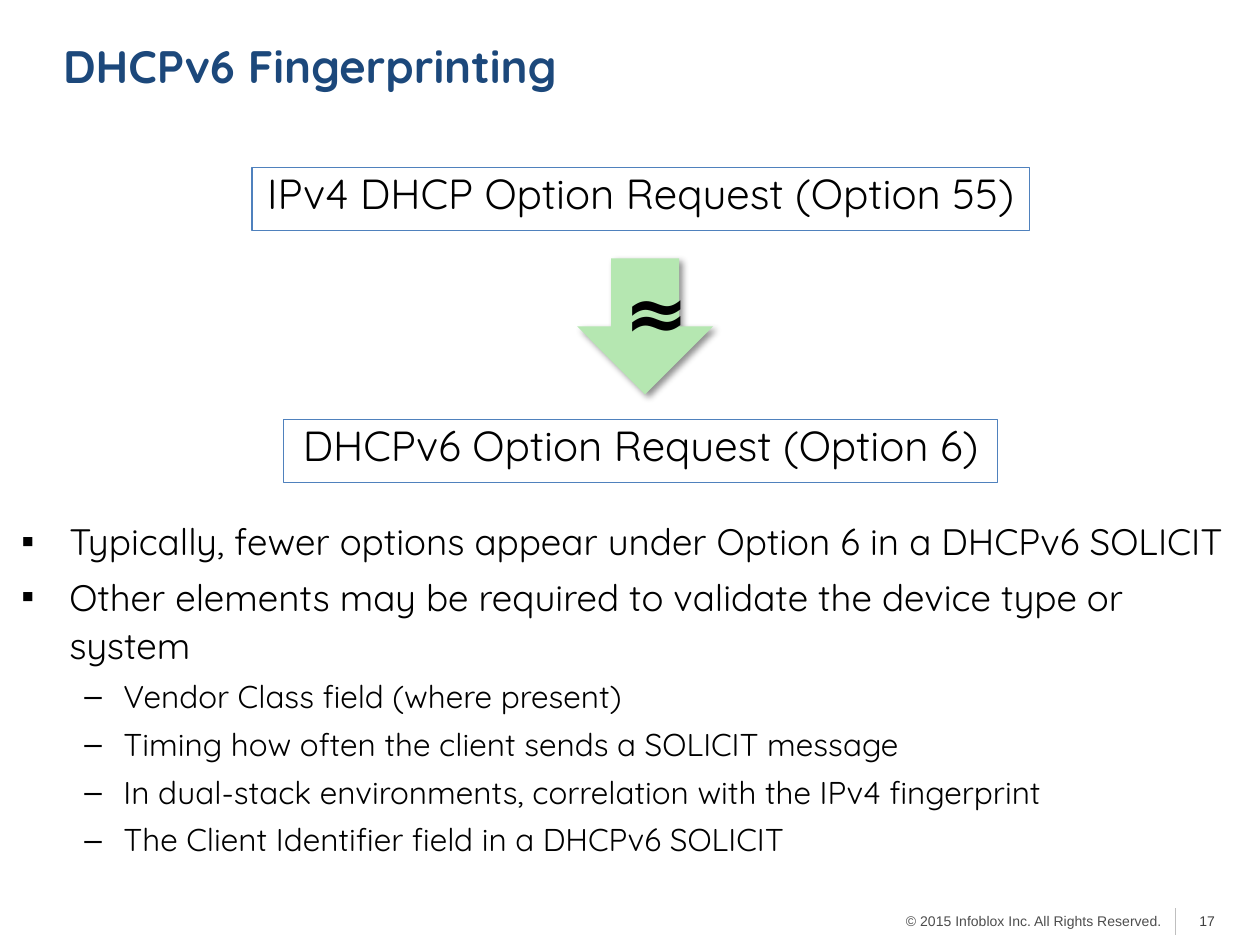
from lxml import etree
from pptx import Presentation
from pptx.dml.color import RGBColor
from pptx.enum import shapes, text
from pptx.oxml import parse_xml
from pptx.oxml.ns import qn
from pptx.util import Inches, Pt

NAVY = RGBColor(0x1C, 0x48, 0x7B)
BLUE = RGBColor(0x4F, 0x81, 0xBD)
GREEN = RGBColor(0xB5, 0xE7, 0xB1)
BLACK = RGBColor(0, 0, 0)
DARK = RGBColor(0x40, 0x40, 0x40)
GRAY = RGBColor(0x4D, 0x4D, 0x4D)
PALE = RGBColor(0xBF, 0xBF, 0xBF)
LEFT, MID, RIGHT = text.PP_ALIGN.LEFT, text.PP_ALIGN.CENTER, text.PP_ALIGN.RIGHT
NS = "http://schemas.openxmlformats.org/drawingml/2006/main"


def write(par, words, size, color=BLACK, face="Quicksand", bold=False, align=LEFT):
    par.alignment = align
    run = par.add_run()
    run.text = words
    run.font.size = Pt(size)
    run.font.name = face
    run.font.bold = bold
    run.font.color.rgb = color


def frame(shape, inset=0, wrap=True, anchor=text.MSO_ANCHOR.TOP):
    body = shape.text_frame
    body.word_wrap = wrap
    body.vertical_anchor = anchor
    body.margin_left = body.margin_right = Inches(inset)
    body.margin_top = body.margin_bottom = Inches(inset / 2)
    return body


deck = Presentation()
deck.slide_width, deck.slide_height = Inches(10), Inches(7.5)
slide = deck.slides.add_slide(deck.slide_layouts[6])
tree = slide.shapes

foot = tree.add_textbox(Inches(4.72), Inches(7.19), Inches(4.6), Inches(0.27))
write(frame(foot, 0.1).paragraphs[0], "© 2015 Infoblox Inc. All Rights Reserved.",
      8, GRAY, "Arial", align=RIGHT)

rule = tree.add_connector(shapes.MSO_CONNECTOR.STRAIGHT,
                          Inches(9.33), Inches(7.21), Inches(9.33), Inches(7.42))
rule.line.color.rgb = PALE
rule.line.width = Pt(1)
etree.SubElement(rule._element.spPr, qn("a:effectLst"))

title = tree.add_textbox(Inches(0.5), Inches(0.1), Inches(9.25), Inches(0.83))
write(frame(title, anchor=text.MSO_ANCHOR.MIDDLE).paragraphs[0],
      "DHCPv6 Fingerprinting", 26, NAVY, bold=True)

page = tree.add_textbox(Inches(9.42), Inches(7.19), Inches(0.42), Inches(0.2))
write(frame(page, 0.1).paragraphs[0], "17", 8, DARK, "Arial")

for left, top, width, words in [
    (2, 1.33, 6.17, "IPv4 DHCP Option Request (Option 55)"),
    (2.25, 3.33, 5.67, "DHCPv6 Option Request (Option 6)"),
]:
    box = tree.add_shape(shapes.MSO_SHAPE.RECTANGLE,
                         Inches(left), Inches(top), Inches(width), Inches(0.5))
    box.shadow.inherit = False
    box.fill.background()
    box.line.color.rgb = BLUE
    box.line.width = Pt(0.75)
    write(frame(box).paragraphs[0], words, 24, align=MID)

group = tree.add_group_shape()
arrow = group.shapes.add_shape(shapes.MSO_SHAPE.DOWN_ARROW,
                               Inches(4.58), Inches(2.05), Inches(1.08), Inches(1.08))
arrow.shadow.inherit = False
arrow.fill.solid()
arrow.fill.fore_color.rgb = GREEN
arrow.line.fill.background()
arrow._element.spPr.find(qn("a:effectLst")).append(parse_xml(
    f'<a:outerShdw xmlns:a="{NS}" blurRad="{Pt(4)}" dist="{Pt(3)}" dir="2700000" '
    'algn="tl" rotWithShape="0"><a:srgbClr val="000000"><a:alpha val="43000"/>'
    '</a:srgbClr></a:outerShdw>'))

sign = group.shapes.add_textbox(Inches(4.86), Inches(2.04), Inches(0.42), Inches(0.84))
body = frame(sign, 0.1, wrap=False)
body.auto_size = text.MSO_AUTO_SIZE.SHAPE_TO_FIT_TEXT
write(body.paragraphs[0], "≈", 44, face="Cabin", bold=True)

notes = tree.add_textbox(Inches(0.17), Inches(4.08), Inches(9.67), Inches(2.58))
body = frame(notes)
kinds = [("▪", 21, 0.38, 0.38), ("–", 18, 0.81, 0.31)]
for item, (level, words) in enumerate([
    (0, "Typically, fewer options appear under Option 6 in a DHCPv6 SOLICIT"),
    (0, "Other elements may be required to validate the device type or system"),
    (1, "Vendor Class field (where present)"),
    (1, "Timing how often the client sends a SOLICIT message"),
    (1, "In dual-stack environments, correlation with the IPv4 fingerprint"),
    (1, "The Client Identifier field in a DHCPv6 SOLICIT"),
]):
    mark, size, left, hang = kinds[level]
    par = body.add_paragraph() if item else body.paragraphs[0]
    par.level = level
    par.line_spacing = 1.1
    par.space_before = Pt(size * 0.2 if item else 0)
    props = par._p.get_or_add_pPr()
    props.set("marL", str(Inches(left)))
    props.set("indent", str(-Inches(hang)))
    etree.SubElement(props, qn("a:buFont")).set("typeface", "Arial")
    etree.SubElement(props, qn("a:buChar")).set("char", mark)
    write(par, words, size)

deck.save("out.pptx")
